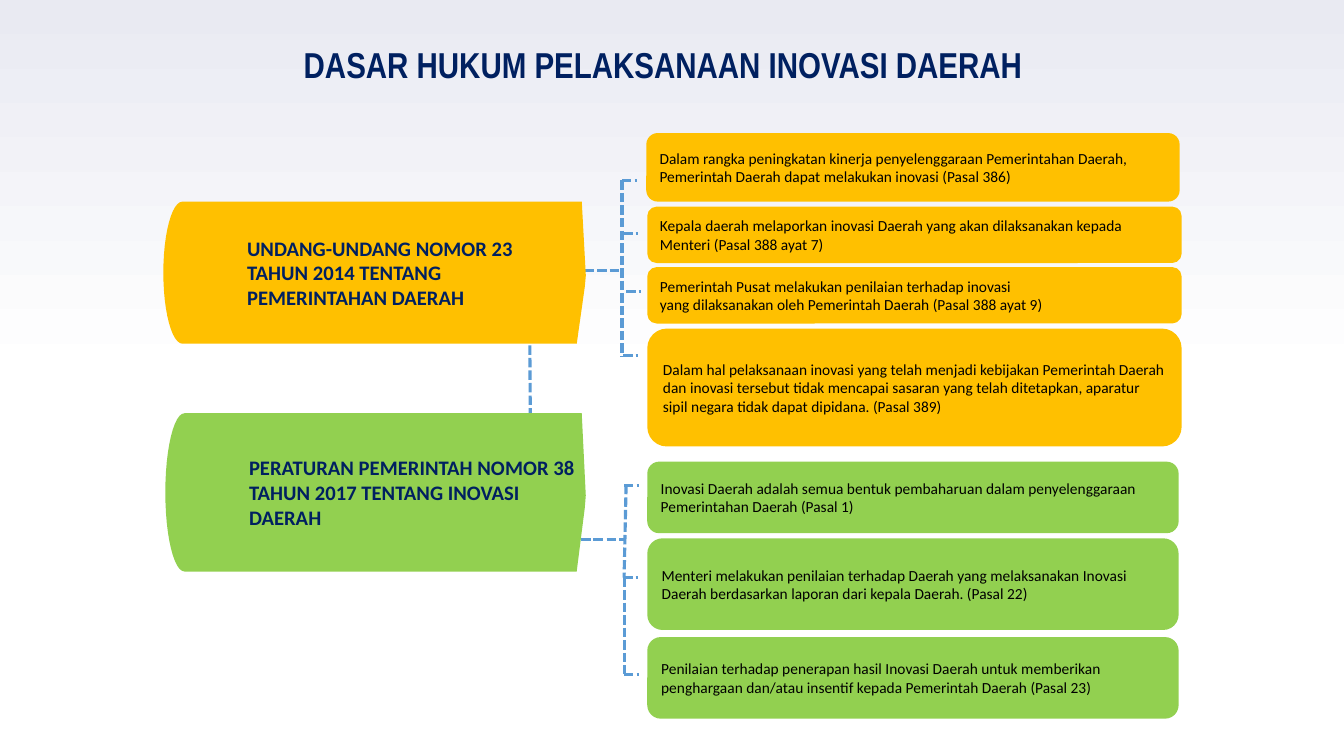
import math
import pptx
import pptx.util
import pptx.dml.color
import pptx.enum.dml
import pptx.enum.shapes
import pptx.enum.text
import pptx.oxml

COLUMNS, ROWS = 133.3, 75
NAVY, AMBER, GREEN, BLUE = "002060", "FFC000", "92D050", "5B9BD5"

deck = pptx.Presentation()
deck.slide_width = pptx.util.Inches(13.33)
deck.slide_height = pptx.util.Inches(7.5)
cell = deck.slide_height / ROWS


def grid(*cells):
    return [pptx.util.Emu(round(count * cell)) for count in cells]


def color(value):
    return pptx.dml.color.RGBColor.from_string(value)


slide = deck.slides.add_slide(deck.slide_layouts[5])
backdrop = slide.background.fill
backdrop.gradient()
backdrop.gradient_angle = 90
for stop, (position, shade) in zip(backdrop.gradient_stops, [(0.5, "FFFFFF"), (1, "E9EAF2")]):
    stop.position = position
    stop.color.rgb = color(shade)

heading = slide.shapes.title
heading.left, heading.top, heading.width, heading.height = grid(16.4, 3.7, 98.7, 5.3)
heading.text = "DASAR HUKUM PELAKSANAAN INOVASI DAERAH"
heading.text_frame.auto_size = pptx.enum.text.MSO_AUTO_SIZE.NONE
heading.text_frame.vertical_anchor = pptx.enum.text.MSO_ANCHOR.MIDDLE
heading_line = heading.text_frame.paragraphs[0]
heading_line.alignment = pptx.enum.text.PP_ALIGN.CENTER
heading_line.font.name = "Arial Narrow"
heading_line.font.size = pptx.util.Pt(25.7)
heading_line.font.bold = True
heading_line.font.color.rgb = color(NAVY)

links = [
    (52.5, 26.8, 52.6, 41.6),
    (51.8, 26.8, 60.4, 26.8),
    (53, 26.8, 61.6, 26.8),
    (51.4, 53.5, 60, 53.5),
    (52.7, 53.5, 62, 53.5),
    (61.7, 17.9, 61.7, 35.4),
    (62.1, 48.1, 61.9, 57.3),
    (61.9, 57.3, 61.9, 66.9),
]
branches = [
    (61.7, 17.9), (61.8, 23.2), (62.1, 28.9), (61.8, 35.3),
    (61.9, 48.2), (61.8, 57.3), (61.9, 66.9),
]
links += [(start, row, start + 1.5, row) for start, row in branches]

for link in links:
    connector = slide.shapes.add_connector(pptx.enum.shapes.MSO_CONNECTOR.STRAIGHT, *grid(*link))
    connector.line.color.rgb = color(BLUE)
    connector.line.width = pptx.util.Pt(2.25)
    connector.line.dash_style = pptx.enum.dml.MSO_LINE.SQUARE_DOT
    connector._element.spPr.append(pptx.oxml.parse_xml(
        '<a:effectLst xmlns:a="http://schemas.openxmlformats.org/drawingml/2006/main"/>'))

articles = [
    (64.1, 13.2, 52.9, 6.8, AMBER, "Dalam rangka peningkatan kinerja penyelenggaraan Pemerintahan Daerah, Pemerintah Daerah dapat melakukan inovasi (Pasal 386)"),
    (64.2, 20.5, 53, 5.6, AMBER, "Kepala daerah melaporkan inovasi Daerah yang akan dilaksanakan kepada Menteri (Pasal 388 ayat 7)"),
    (64.2, 26.5, 53, 5.6, AMBER, "Pemerintah Pusat melakukan penilaian terhadap inovasi\nyang dilaksanakan oleh Pemerintah Daerah (Pasal 388 ayat 9)"),
    (64.2, 32.6, 53, 11.7, AMBER, "Dalam hal pelaksanaan inovasi yang telah menjadi kebijakan Pemerintah Daerah dan inovasi tersebut tidak mencapai sasaran yang telah ditetapkan, aparatur sipil negara tidak dapat dipidana. (Pasal 389)"),
    (64.2, 45.8, 52.7, 7.1, GREEN, "Inovasi Daerah adalah semua bentuk pembaharuan dalam penyelenggaraan Pemerintahan Daerah (Pasal 1)"),
    (64.2, 53.4, 52.7, 9.1, GREEN, "Menteri melakukan penilaian terhadap Daerah yang melaksanakan Inovasi Daerah berdasarkan laporan dari kepala Daerah. (Pasal 22)"),
    (64.2, 63.2, 52.7, 8.1, GREEN, "Penilaian terhadap penerapan hasil Inovasi Daerah untuk memberikan penghargaan dan/atau insentif kepada Pemerintah Daerah (Pasal 23)"),
]
panels = []
for left, top, width, height, tint, wording in articles:
    article = slide.shapes.add_shape(
        pptx.enum.shapes.MSO_SHAPE.ROUNDED_RECTANGLE, *grid(left, top, width, height))
    panels.append((article, tint, wording, 11, "000000", False, 1))

laws = [
    (16.2, 20, 14.1, AMBER, "UNDANG-UNDANG NOMOR 23 TAHUN 2014 TENTANG PEMERINTAHAN DAERAH"),
    (16.4, 41, 15.7, GREEN, "PERATURAN PEMERINTAH NOMOR 38 TAHUN 2017 TENTANG INOVASI DAERAH"),
]
for left, top, height, tint, wording in laws:
    radius = height / 2
    outline = [(57.7, top), (58.1, top + 0.52 * height), (58, top + 0.6 * height), (57.2, top + height)]
    for step in range(25):
        angle = math.pi * step / 24
        outline.append((left + 1.9 * (1 - math.sin(angle)), top + radius * (1 + math.cos(angle))))
    points = [grid(*point) for point in outline]
    builder = slide.shapes.build_freeform(*points[0])
    builder.add_line_segments(points[1:])
    panels.append((builder.convert_to_shape(), tint, wording, 14.7, NAVY, True, 8.3))

for panel, tint, wording, size, ink, bold, indent in panels:
    panel.shadow.inherit = False
    panel.fill.solid()
    panel.fill.fore_color.rgb = color(tint)
    panel.line.fill.background()
    frame = panel.text_frame
    frame.text = wording
    frame.word_wrap = True
    frame.vertical_anchor = pptx.enum.text.MSO_ANCHOR.MIDDLE
    frame.margin_left, frame.margin_right = grid(indent, 0.9)
    for paragraph in frame.paragraphs:
        paragraph.alignment = pptx.enum.text.PP_ALIGN.LEFT
        paragraph.font.name = "Calibri"
        paragraph.font.size = pptx.util.Pt(size)
        paragraph.font.bold = bold
        paragraph.font.color.rgb = color(ink)

deck.save("out.pptx")
